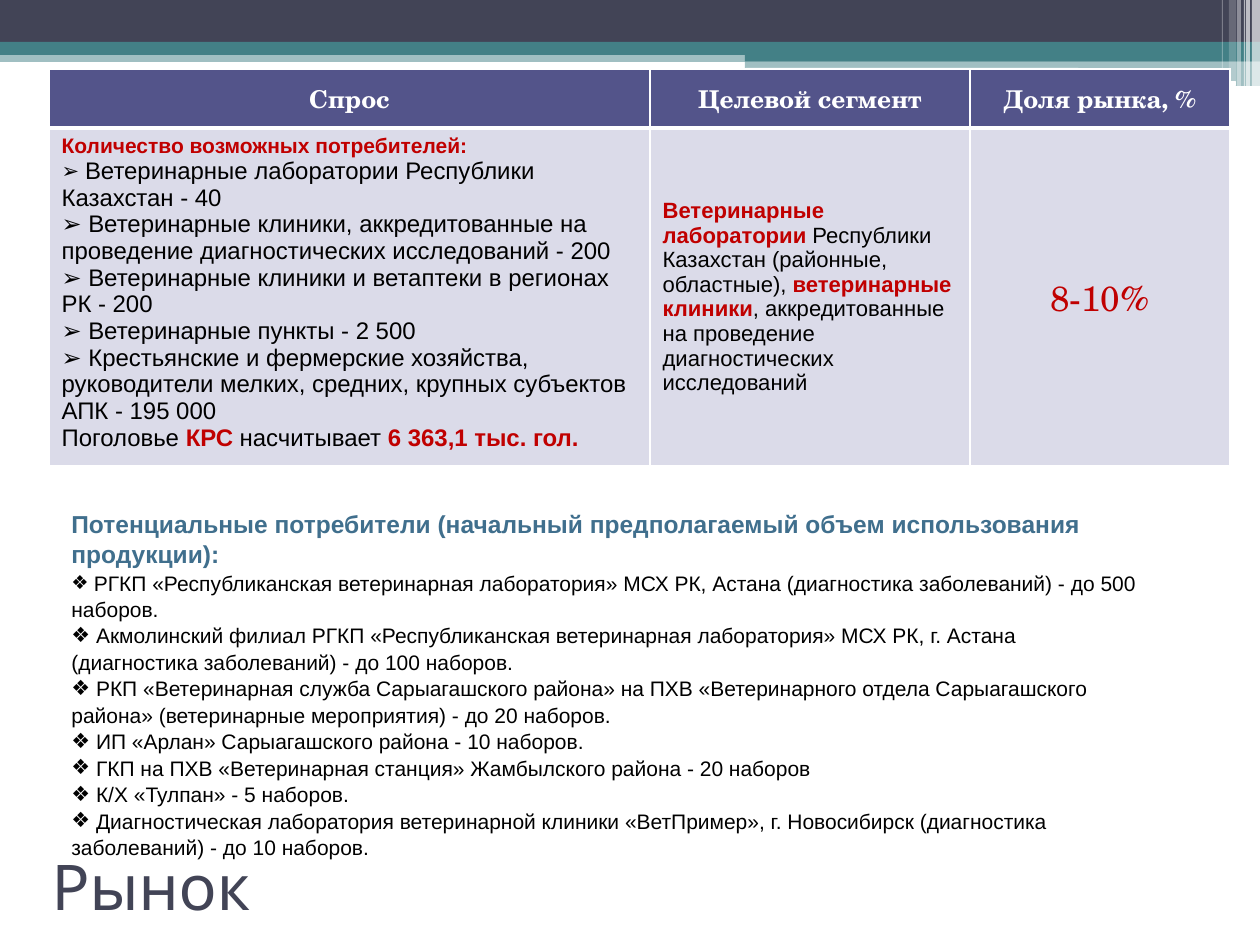
from lxml.etree import SubElement
from pptx import Presentation
from pptx.dml.color import RGBColor
from pptx.enum.shapes import MSO_SHAPE
from pptx.enum.text import MSO_ANCHOR as ANCHOR, PP_ALIGN as ALIGN
from pptx.oxml.ns import qn
from pptx.util import Pt

PX = 914400 // 126


class Theme:
    navy, teal, white, black = "424456", "438086", "FFFFFF", "000000"
    header, body, red, blue = "53548A", "DBDBE9", "C00000", "406F8D"
    sans, serif, title_font = "Arial", "TeX Gyre Schola", "Karla"
    title, share, large, header_size, segment, small, tiny = 36, 20, 13.7, 14, 12.6, 12, 11


HEADER = dict(size=Theme.header_size, name=Theme.serif, color=Theme.white, bold=True)
LARGE = dict(size=Theme.large, name=Theme.sans, color=Theme.black, bold=False)
LARGE_RED = LARGE | dict(color=Theme.red, bold=True)
SEGMENT = LARGE | dict(size=Theme.segment)
SEGMENT_RED = LARGE_RED | dict(size=Theme.segment)
SMALL = LARGE | dict(size=Theme.small)
SMALL_RED = LARGE_RED | dict(size=Theme.small)
TINY = LARGE | dict(size=Theme.tiny)
SHARE = HEADER | dict(size=Theme.share, color=Theme.red, bold=False)
HEADING = HEADER | dict(name=Theme.sans, color=Theme.blue)
TITLE = dict(size=Theme.title, name=Theme.title_font, color=Theme.navy, bold=False)

# left, top, width, height, colour, opacity in percent
BANDS = [
    (0, 50, 1260, 12, Theme.teal, 50),
    (0, 0, 1260, 43, Theme.navy, 100),
    (0, 42, 1260, 13, Theme.teal, 100),
    (745, 49, 515, 12, Theme.teal, 100),
    (745, 61, 515, 25, Theme.teal, 50),
]
ROUNDED_BARS = [
    (745, 68, 422, 4, Theme.white, 100),
    (1016, 81, 220, 5, Theme.white, 100),
]
STRIPES = [  # left, width, height, opacity
    (1252, 8, 86, 65), (1246, 4, 86, 65), (1244, 1, 86, 60),
    (1237, 4, 86, 40), (1229, 7, 81, 20), (1222, 1, 81, 30),
]

DEMAND = [
    "Ветеринарные клиники, аккредитованные на проведение диагностических исследований - 200",
    "Ветеринарные клиники и ветаптеки в регионах РК - 200",
    "Ветеринарные пункты - 2 500",
    "Крестьянские и фермерские хозяйства, руководители мелких, средних, крупных "
    "субъектов АПК - 195 000",
]
CUSTOMERS = [
    "Акмолинский филиал РГКП «Республиканская ветеринарная лаборатория» МСХ РК, г. Астана "
    "(диагностика заболеваний) - до 100 наборов.",
    "РКП «Ветеринарная служба Сарыагашского района» на ПХВ «Ветеринарного отдела "
    "Сарыагашского района» (ветеринарные мероприятия) - до 20 наборов.",
    "ИП «Арлан» Сарыагашского района - 10 наборов.",
    "ГКП на ПХВ «Ветеринарная станция» Жамбылского района - 20 наборов",
    "К/Х «Тулпан» - 5 наборов.",
    "Диагностическая лаборатория ветеринарной клиники «ВетПример», г. Новосибирск "
    "(диагностика заболеваний) - до 10 наборов.",
]


def set_values(target, **values):
    for name, value in values.items():
        setattr(target, name, value)


def place(shape, left, top, width, height):
    set_values(shape, left=left * PX, top=top * PX, width=width * PX, height=height * PX)


def add_bar(slide, kind, left, top, width, height, color, opacity):
    bar = slide.shapes.add_shape(kind, left * PX, top * PX, width * PX, height * PX)
    bar.shadow.inherit = False
    bar.line.fill.background()
    bar.fill.solid()
    bar.fill.fore_color.rgb = RGBColor.from_string(color)
    if opacity < 100:
        color_node = bar.fill._xPr.find(qn("a:solidFill"))[0]
        SubElement(color_node, qn("a:alpha"), val=str(opacity * 1000))


def write(frame, paragraphs, align=ALIGN.LEFT, spacing=None):
    """Fill a text frame from (bullet, [(text, format), ...]) paragraphs."""
    for index, (bullet, runs) in enumerate(paragraphs):
        paragraph = frame.add_paragraph() if index else frame.paragraphs[0]
        set_values(paragraph, alignment=align, line_spacing=spacing)
        if bullet:
            properties = paragraph._p.get_or_add_pPr()
            properties.set("marL", "0")
            properties.set("indent", "0")
            SubElement(properties, qn("a:buFont"), typeface=Theme.sans)
            SubElement(properties, qn("a:buChar"), char=bullet)
        for text, style in runs:
            run = paragraph.add_run()
            run.text = text
            set_values(run.font, size=Pt(style["size"]), name=style["name"], bold=style["bold"])
            run.font.color.rgb = RGBColor.from_string(style["color"])


def set_borders(cell, bottom):
    properties = cell._tc.get_or_add_tcPr()
    widths = dict(lnL=1, lnR=1, lnT=1, lnB=bottom)
    for index, (side, width) in enumerate(widths.items()):
        line = SubElement(properties, qn(f"a:{side}"), w=str(Pt(width)))
        fill = SubElement(line, qn("a:solidFill"))
        SubElement(fill, qn("a:srgbClr"), val=Theme.white)
        properties.insert(index, line)


def add_market_table(slide):
    demand = [
        (None, [("Количество возможных потребителей:", SMALL_RED)]),
        ("➢", [(" ", SMALL), ("Ветеринарные лаборатории Республики Казахстан - 40", LARGE)]),
        *(("➢", [(" " + item, LARGE)]) for item in DEMAND),
        (None, [("Поголовье ", LARGE), ("КРС ", LARGE_RED), ("насчитывает ", LARGE),
                ("6 363,1 тыс. гол.", LARGE_RED)]),
    ]
    segment = [(None, [
        ("Ветеринарные лаборатории ", SEGMENT_RED),
        ("Республики Казахстан (районные, областные), ", SEGMENT),
        ("ветеринарные клиники", SEGMENT_RED),
        (", аккредитованные на проведение диагностических исследований", SEGMENT)])]
    share = [(None, [("8-10%", SHARE)])]
    headers = ["Спрос", "Целевой сегмент", "Доля рынка, %"]
    rows = [
        (Theme.header, 3, [([(None, [(text, HEADER)])], ALIGN.CENTER, ANCHOR.MIDDLE)
                           for text in headers]),
        (Theme.body, 1, [(demand, ALIGN.LEFT, ANCHOR.TOP),
                         (segment, ALIGN.LEFT, ANCHOR.MIDDLE),
                         (share, ALIGN.CENTER, ANCHOR.MIDDLE)]),
    ]
    widths, heights = [601, 320, 260], [59, 338]
    table = slide.shapes.add_table(2, 3, 49 * PX, 69 * PX,
                                   sum(widths) * PX, sum(heights) * PX).table
    for column, width in zip(table.columns, widths):
        column.width = width * PX
    for row, height, (color, bottom, contents) in zip(table.rows, heights, rows):
        row.height = height * PX
        for cell, (paragraphs, align, anchor) in zip(row.cells, contents):
            cell.fill.solid()
            cell.fill.fore_color.rgb = RGBColor.from_string(color)
            cell.vertical_anchor = anchor
            set_borders(cell, bottom)
            write(cell.text_frame, paragraphs, align)


def add_customers(slide):
    box = slide.shapes.add_textbox(59 * PX, 501 * PX, 1103 * PX, 352 * PX)
    box.text_frame.word_wrap = True
    write(box.text_frame, [
        (None, [("Потенциальные потребители (начальный предполагаемый объем "
                 "использования продукции):", HEADING)]),
        ("❖", [(" ", TINY), ("РГКП «Республиканская ветеринарная лаборатория» МСХ РК, Астана "
                             "(диагностика заболеваний) - до 500 наборов.", SMALL)]),
        *(("❖", [(" " + item, SMALL)]) for item in CUSTOMERS),
    ], spacing=1.05)


def set_title(slide, text):
    title = slide.shapes.title
    place(title, 39, 847, 1128, 76)
    set_values(title.text_frame, vertical_anchor=ANCHOR.MIDDLE, word_wrap=True)
    write(title.text_frame, [(None, [(text, TITLE)])])


def main():
    presentation = Presentation()
    set_values(presentation, slide_width=1260 * PX, slide_height=945 * PX)
    slide = presentation.slides.add_slide(presentation.slide_layouts[5])
    for band in BANDS:
        add_bar(slide, MSO_SHAPE.RECTANGLE, *band)
    for bar in ROUNDED_BARS:
        add_bar(slide, MSO_SHAPE.ROUNDED_RECTANGLE, *bar)
    for left, width, height, opacity in STRIPES:
        add_bar(slide, MSO_SHAPE.RECTANGLE, left, 0, width, height, Theme.white, opacity)
    add_market_table(slide)
    add_customers(slide)
    set_title(slide, "Рынок")
    presentation.save("out.pptx")


if __name__ == "__main__":
    main()
